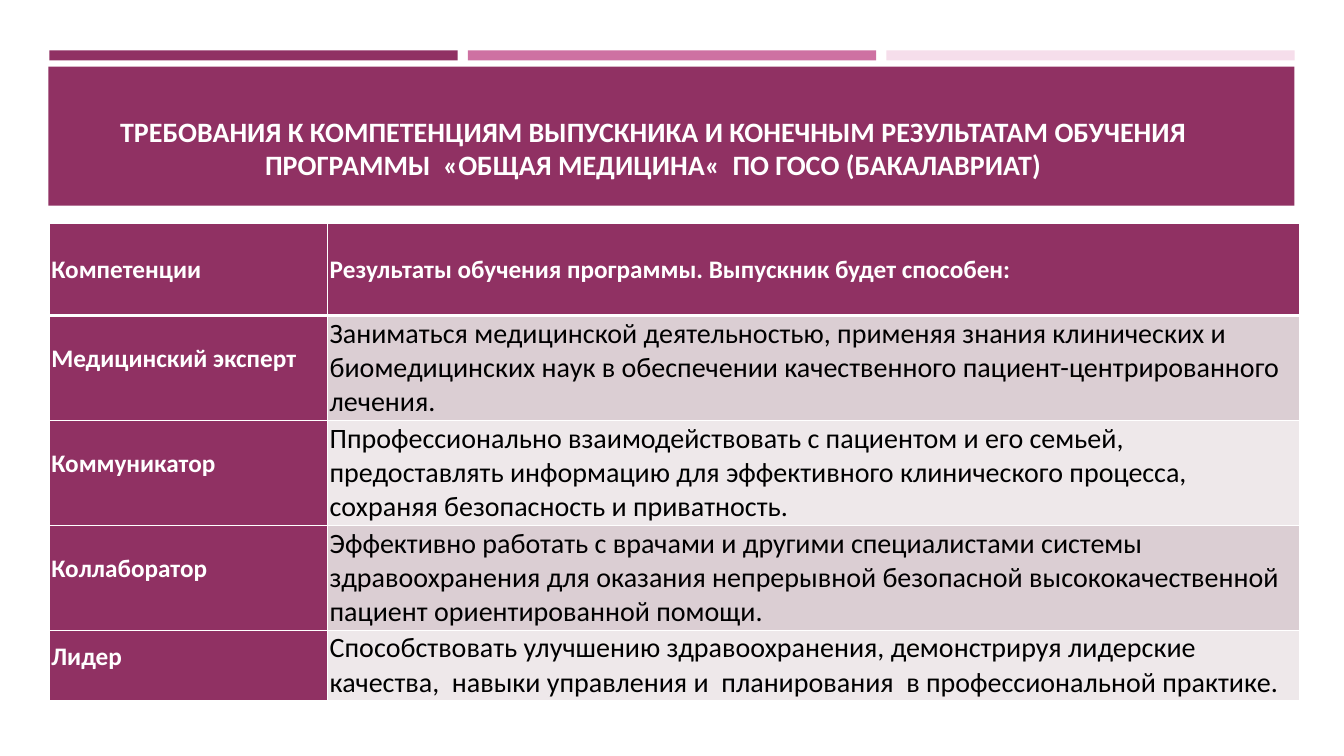
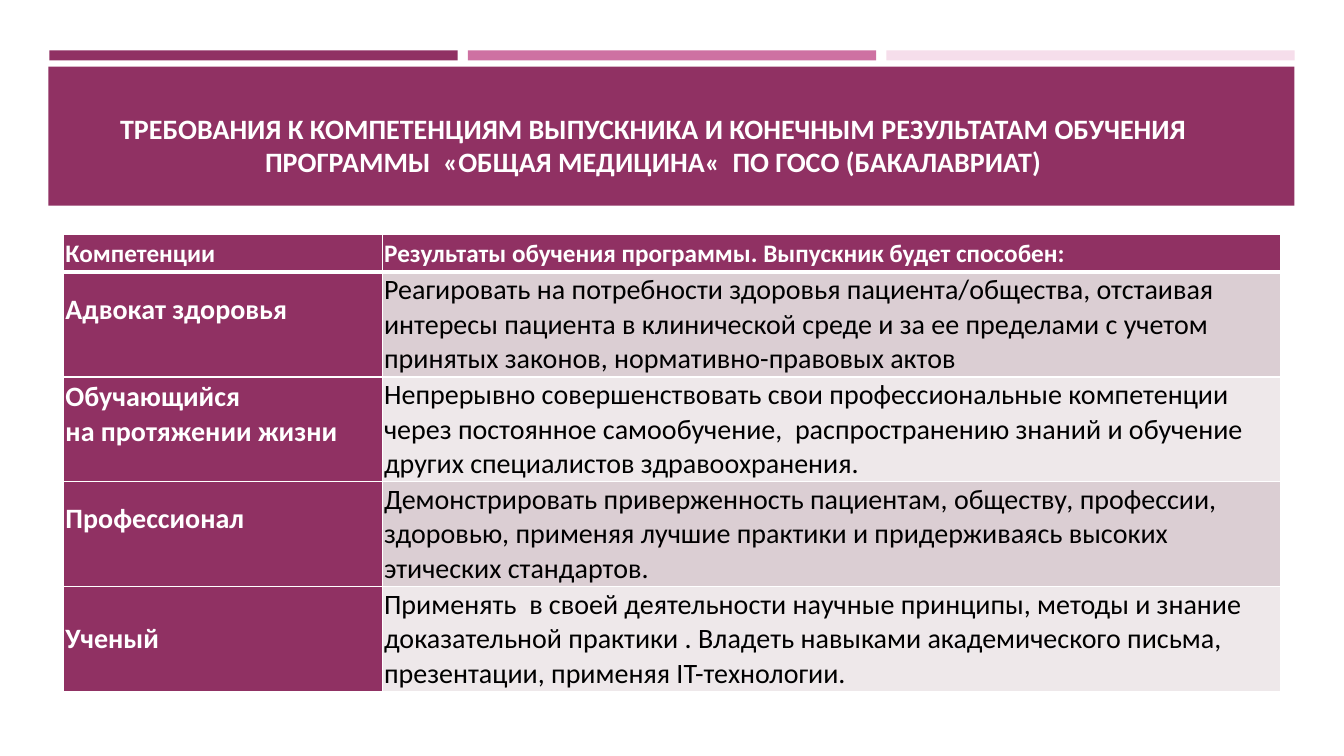
from lxml import etree
from pptx import Presentation
from pptx.dml.color import RGBColor
from pptx.enum.shapes import MSO_SHAPE as Shape
from pptx.enum.text import MSO_ANCHOR as Anchor, MSO_AUTO_SIZE as AutoSize, PP_ALIGN as Align
from pptx.oxml.ns import qn
from pptx.util import Inches, Pt

FONT = "Calibri"
PLUM, ROSE, BLUSH, WHITE, BLACK = "903163", "CE71A2", "F6DEEB", "FFFFFF", "000000"
ROW_TINTS = ("DBCED3", "EEE8EA")
TITLE = ("ТРЕБОВАНИЯ К КОМПЕТЕНЦИЯМ ВЫПУСКНИКА И КОНЕЧНЫМ РЕЗУЛЬТАТАМ ОБУЧЕНИЯ "
         "ПРОГРАММЫ  «ОБЩАЯ МЕДИЦИНА«  ПО ГОСО (БАКАЛАВРИАТ)")
HEADINGS = ("Компетенции", "Результаты обучения программы. Выпускник будет способен:")

# Each row: competency, outcome, height, gap kept free below the competency
SLIDES = [
    {"title_box": (0.45, 0.36, 12.06, 1.49), "table_at": (0.49, 2.22),
     "columns": (2.76, 9.64), "header_height": 0.91, "label_size": 18,
     "rows": [
         ("Медицинский эксперт",
          "Заниматься медицинской деятельностью, применяя знания клинических и биомедицинских "
          "наук в обеспечении качественного пациент-центрированного лечения.", 1.04, 0.17),
         ("Коммуникатор",
          "Ппрофессионально взаимодействовать с пациентом и его семьей, предоставлять информацию "
          "для эффективного клинического процесса, сохраняя безопасность и приватность.", 1.04, 0.17),
         ("Коллаборатор",
          "Эффективно работать с врачами и другими специалистами системы здравоохранения для "
          "оказания непрерывной безопасной высококачественной пациент ориентированной помощи.",
          1.04, 0.17),
         ("Лидер",
          "Способствовать улучшению здравоохранения, демонстрируя лидерские качества,  навыки "
          "управления и  планирования  в профессиональной практике.", 0.7, 0.17),
     ]},
    {"title_box": (0.45, 0.36, 12.06, 1.46), "table_at": (0.63, 2.33),
     "columns": (3.16, 8.91), "header_height": 0.37, "label_size": 20,
     "rows": [
         ("Адвокат здоровья",
          "Реагировать на потребности здоровья пациента/общества, отстаивая интересы пациента в "
          "клинической среде и за ее пределами с учетом принятых законов, нормативно-правовых актов",
          1.04, 0.3),
         ("Обучающийся\nна протяжении жизни",
          "Непрерывно совершенствовать свои профессиональные компетенции через постоянное "
          "самообучение,  распространению знаний и обучение других специалистов здравоохранения.",
          1.04, 0.3),
         ("Профессионал",
          "Демонстрировать приверженность пациентам, обществу, профессии, здоровью, применяя "
          "лучшие практики и придерживаясь высоких этических стандартов.", 1.04, 0.3),
         ("Ученый",
          "Применять  в своей деятельности научные принципы, методы и знание доказательной "
          "практики . Владеть навыками академического письма, презентации, применяя IT-технологии.",
          1.04, 0),
     ]},
]


def color(value):
    return RGBColor.from_string(value)


def set_all(target, **values):
    for name, value in values.items():
        setattr(target, name, value)


def write(frame, text, size, ink, bold, align):
    """Fill a text frame, one paragraph per line of text."""
    frame.text = text
    for para in frame.paragraphs:
        para.alignment = align
        for span in para.runs:
            set_all(span.font, name=FONT, size=Pt(size), bold=bold)
            span.font.color.rgb = color(ink)


def add_bands(page, layout):
    """Draw the three strips and the title band, and keep them on the layout."""
    strips = [(0.49 + 4.15 * index, 0.5, 4.05, 0.1, fill)
              for index, fill in enumerate((PLUM, ROSE, BLUSH))]
    bands = strips + [(0.48, 0.66, 12.36, 1.38, PLUM)]
    for left, top, width, height, fill in bands:
        band = page.shapes.add_shape(Shape.RECTANGLE, *map(Inches, (left, top, width, height)))
        band.shadow.inherit = False
        band.fill.solid()
        band.fill.fore_color.rgb = color(fill)
        band.line.fill.background()
        layout.shapes.element.insert(2, band.element)


def place_title(page, bounds):
    title = page.shapes.title
    set_all(title, **dict(zip(("left", "top", "width", "height"), map(Inches, bounds))))
    frame = title.text_frame
    write(frame, TITLE, 20, WHITE, True, Align.CENTER)
    set_all(frame, word_wrap=True, auto_size=AutoSize.NONE, vertical_anchor=Anchor.BOTTOM)


def add_borders(cell, top, bottom):
    """Give a cell white borders; top and bottom are widths in points."""
    properties = cell._tc.get_or_add_tcPr()
    for side, width in (("L", 1), ("R", 1), ("T", top), ("B", bottom)):
        line = etree.SubElement(properties, qn(f"a:ln{side}"), w=str(Pt(width)))
        fill = etree.SubElement(line, qn("a:solidFill"))
        etree.SubElement(fill, qn("a:srgbClr"), val=WHITE)


def add_competency_table(page, content):
    heights = [content["header_height"]] + [row[2] for row in content["rows"]]
    left, top = content["table_at"]
    bounds = map(Inches, (left, top, sum(content["columns"]), sum(heights)))
    table = page.shapes.add_table(len(heights), 2, *bounds).table
    table.horz_banding = False
    for column, width in zip(table.columns, content["columns"]):
        column.width = Inches(width)
    for row, height in zip(table.rows, heights):
        row.height = Inches(height)

    texts = [HEADINGS] + [row[:2] for row in content["rows"]]
    gaps = [0] + [row[3] for row in content["rows"]]
    for row_index, (pair, gap) in enumerate(zip(texts, gaps)):
        for column_index, text in enumerate(pair):
            cell = table.cell(row_index, column_index)
            is_header, is_label = row_index == 0, column_index == 0
            strong = is_header or is_label
            size = 18 if is_header else content["label_size"] if is_label else 20
            write(cell.text_frame, text, size, WHITE if strong else BLACK, strong, Align.LEFT)
            set_all(cell, vertical_anchor=Anchor.MIDDLE,
                    margin_left=Inches(0.02), margin_right=Inches(0.01),
                    margin_top=Inches(0.01),
                    margin_bottom=Inches(0.01 + (gap if is_label else 0)))
            add_borders(cell, 3 if row_index == 1 else 1, 3 if is_header else 1)
            cell.fill.solid()
            cell.fill.fore_color.rgb = color(PLUM if strong else ROW_TINTS[(row_index - 1) % 2])


def main():
    deck = Presentation()
    set_all(deck, slide_width=Inches(13.33), slide_height=Inches(7.5))
    layout = deck.slide_layouts.get_by_name("Title Only")
    for index, content in enumerate(SLIDES):
        page = deck.slides.add_slide(layout)
        if index == 0:
            add_bands(page, layout)
        place_title(page, content["title_box"])
        add_competency_table(page, content)
    deck.save("out.pptx")


if __name__ == "__main__":
    main()
